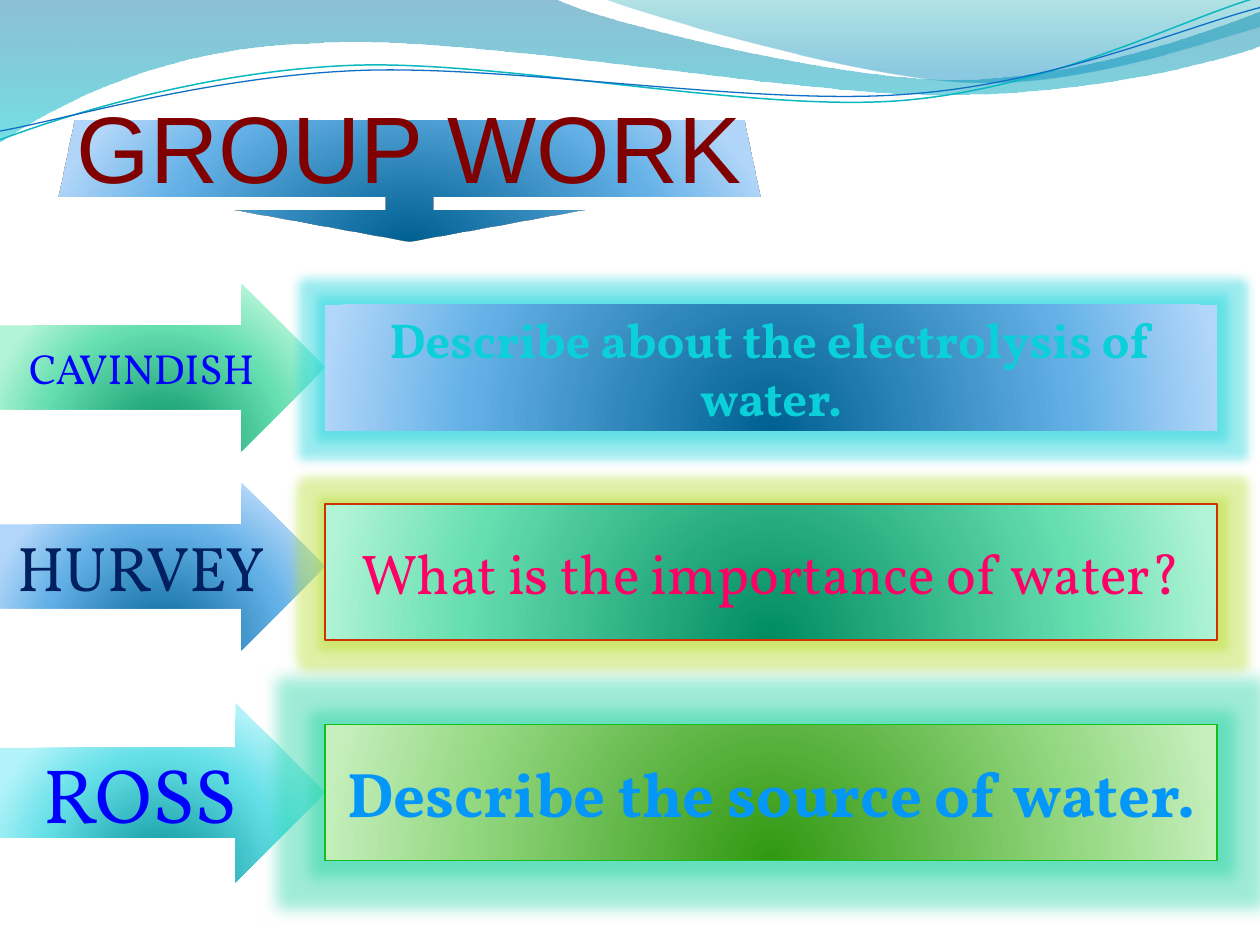
"""Group work slide: three teams, each with an arrow leading to its task."""
from math import cos, radians, sin
from lxml import etree
from pptx import Presentation
from pptx.dml.color import RGBColor
from pptx.enum.shapes import MSO_SHAPE as SHAPE
from pptx.enum.text import MSO_ANCHOR as ANCHOR, PP_ALIGN as ALIGN
from pptx.util import Inches, Pt

NS = "http://schemas.openxmlformats.org/drawingml/2006/main"
STOPS = (0, 68, 100)
BLUE = ("006091", "64B1E7", "B1D6F9")
MINT = ("008C60", "65DEB0", "B2F4D6")
AQUA = ("008A91", "64DFE7", "B1F3F9")
LEAF = ("319811", "95D882", "C6EFBD")
TEXT_STOPS = [(0, "7DC4FF", 100), (75, "0497F9", 100), (100, "0074A1", 100)]
BOX_LEFT, BOX_WIDTH = 2.58, 7.08

WAVES = [
    dict(at=(-0.01, -0.01, 10.02, 1.14), start=(0, 0),
         steps=[(4.4, -0.01), (4.76, 0.17, 6.64, 0.63, 7.58, 0.63),
                (8.53, 0.63, 9.58, 0.26, 10, 0.09), (10.01, 0.36),
                (9.83, 0.44, 8.7, 0.76, 7.46, 0.75),
                (6.22, 0.75, 3.82, 0.28, 2.57, 0.34),
                (1.29, 0.36, 0.46, 0.83, -0.01, 1.13), (0, 0)],
         stops=[(0, "0074A1", 45), (100, "00C6CF", 55)]),
    dict(at=(4.79, -0.01, 5.21, 0.7), start=(4.79, -0.01),
         steps=[(5.09, 0.11, 6.82, 0.62, 7.69, 0.65),
                (8.56, 0.69, 9.61, 0.32, 10, 0.21), (10, 0), (4.79, -0.01)],
         stops=[(0, "00A1A9", 30), (80, "008BBF", 45)]),
    dict(at=(-0.02, 0.22, 10.02, 0.71), start=(0, 1.11), turn=-2.7,
         steps=[(0.48, 0.93, 1.58, 0.57, 2.77, 0.52),
                (3.95, 0.47, 5.93, 0.89, 7.13, 0.8),
                (8.33, 0.71, 9.38, 0.15, 9.98, -0.02)],
         line=("0AB8BF", 0.85)),
    dict(at=(-0.02, 0.3, 10.03, 0.58), start=(0, 1.04), turn=-2.7,
         steps=[(0.47, 0.96, 1.64, 0.61, 2.83, 0.56),
                (4.03, 0.51, 5.97, 0.84, 7.17, 0.75),
                (8.36, 0.67, 9.41, 0.21, 10, 0.06)],
         line=("0F6FC6", 0.75)),
]
TITLE = dict(text="GROUP WORK", at=(0.5, 0.67, 5.5, 1.5), fill=BLUE,
             line="FF0066", font=dict(size=Pt(54), name="Arial"), color="800000")
TEAMS = [
    dict(text="CAVINDISH", top=2.25, height=1.33, fill=MINT, size=24, color="0000FF"),
    dict(text="HURVEY", top=3.83, height=1.33, fill=BLUE, size=36, color="002060"),
    dict(text="ROSS", top=5.58, height=1.42, fill=AQUA, size=44, color="0000FF"),
]
TASKS = [
    dict(text="Describe about the electrolysis of water.", top=2.42, height=1,
         fill=BLUE, line=None, glow=("0BD0D9", 11), size=28, bold=True,
         color="0BD0D9"),
    dict(text="What is the importance of water?", top=4, height=1.08,
         fill=MINT, line="CC3300", glow=("B2DB22", 11), size=32, bold=False,
         color="FF0066"),
    dict(text="Describe the source of water.", top=5.75, height=1.08,
         fill=LEAF, line="13BF1B", glow=("10CF9B", 18), size=36, bold=True,
         color=None),
]


def rgb(value):
    return RGBColor.from_string(value)


def node(parent, tag, **attrs):
    return etree.SubElement(parent, f"{{{NS}}}{tag}",
                            {k: str(v) for k, v in attrs.items()})


def tint(parent, value, opacity):
    color = node(parent, "srgbClr", val=value)
    if opacity < 100:
        node(color, "alpha", val=opacity * 1000)


def gradient(parent, index, stops, radial=False):
    grad = node(parent, "gradFill", rotWithShape=1)
    parent.insert(index, grad)
    stop_list = node(grad, "gsLst")
    for pos, value, opacity in stops:
        tint(node(stop_list, "gs", pos=pos * 1000), value, opacity)
    if radial:
        node(node(grad, "path", path="circle"), "fillToRect",
             l=50000, t=130000, r=50000, b=-30000)
    else:
        node(grad, "lin", ang=5400000, scaled=1)


def set_line(sp, value, width=0.75):
    if value:
        sp.line.color.rgb = rgb(value)
        sp.line.width = Pt(width)
    else:
        sp.line.fill.background()


def add_panel(s, kind, at, text, fill, line, font, color, glow=None):
    sp = s.shapes.add_shape(kind, *map(Inches, at))
    gradient(sp._element.spPr, 2, [(pos, c, 100) for pos, c in zip(STOPS, fill)],
             radial=True)
    set_line(sp, line)
    sp.shadow.inherit = False
    if glow:
        effects = sp._element.spPr.find(f"{{{NS}}}effectLst")
        tint(node(effects, "glow", rad=Pt(glow[1])), glow[0], 40)
    tf = sp.text_frame
    tf.word_wrap = True
    tf.vertical_anchor = ANCHOR.MIDDLE
    p = tf.paragraphs[0]
    p.alignment = ALIGN.CENTER
    r = p.add_run()
    r.text = text
    for key, value in font.items():
        setattr(r.font, key, value)
    if color:
        r.font.color.rgb = rgb(color)
    else:
        gradient(r._r.get_or_add_rPr(), 0, TEXT_STOPS)
    return sp


def tilt_back(sp):
    scene = node(sp._element.spPr, "scene3d")
    node(scene, "camera", prst="perspectiveRelaxed")
    node(scene, "lightRig", rig="threePt", dir="t")
    node(sp._element.spPr, "sp3d")


def add_wave(s, at, start, steps, turn=0, stops=None, line=(None,)):
    left, top, width, height = at
    mid_x, mid_y = left + width / 2, top + height / 2
    c, n = cos(radians(turn)), sin(radians(turn))

    def local(x, y):
        dx, dy = x - mid_x, y - mid_y
        return dict(x=int(Inches(dx * c + dy * n + width / 2)),
                    y=int(Inches(dy * c - dx * n + height / 2)))

    builder = s.shapes.build_freeform(0, 0)
    builder.add_line_segments([(Inches(width), Inches(height))], close=False)
    sp = builder.convert_to_shape()
    sp.left, sp.top, sp.width, sp.height = map(Inches, at)
    sp.rotation = turn
    outline = next(sp._element.iter(f"{{{NS}}}path"))
    for child in list(outline):
        outline.remove(child)
    node(node(outline, "moveTo"), "pt", **local(*start))
    for step in steps:
        segment = node(outline, "lnTo" if len(step) == 2 else "cubicBezTo")
        for x, y in zip(step[::2], step[1::2]):
            node(segment, "pt", **local(x, y))
    if stops:
        node(outline, "close")
        gradient(sp._element.spPr, 2, stops)
    else:
        sp.fill.background()
    set_line(sp, *line)
    sp.shadow.inherit = False


def main():
    prs = Presentation()
    prs.slide_width, prs.slide_height = Inches(10), Inches(7.5)
    s = prs.slides.add_slide(prs.slide_layouts[6])
    for wave in WAVES:
        add_wave(s, **wave)
    callout = add_panel(s, SHAPE.DOWN_ARROW_CALLOUT, **TITLE)
    for i, value in enumerate((0.25, 0.909, 0.25, 0.65)):
        callout.adjustments[i] = value
    tilt_back(callout)
    for t in TEAMS:
        add_panel(s, SHAPE.RIGHT_ARROW, (0, t["top"], BOX_LEFT, t["height"]),
                  t["text"], t["fill"], None,
                  dict(size=Pt(t["size"]), name="Vollkorn"), t["color"])
    for t in TASKS:
        add_panel(s, SHAPE.RECTANGLE, (BOX_LEFT, t["top"], BOX_WIDTH, t["height"]),
                  t["text"], t["fill"], t["line"],
                  dict(size=Pt(t["size"]), name="Vollkorn", bold=t["bold"]),
                  t["color"], t["glow"])
    prs.save("out.pptx")


if __name__ == "__main__":
    main()
